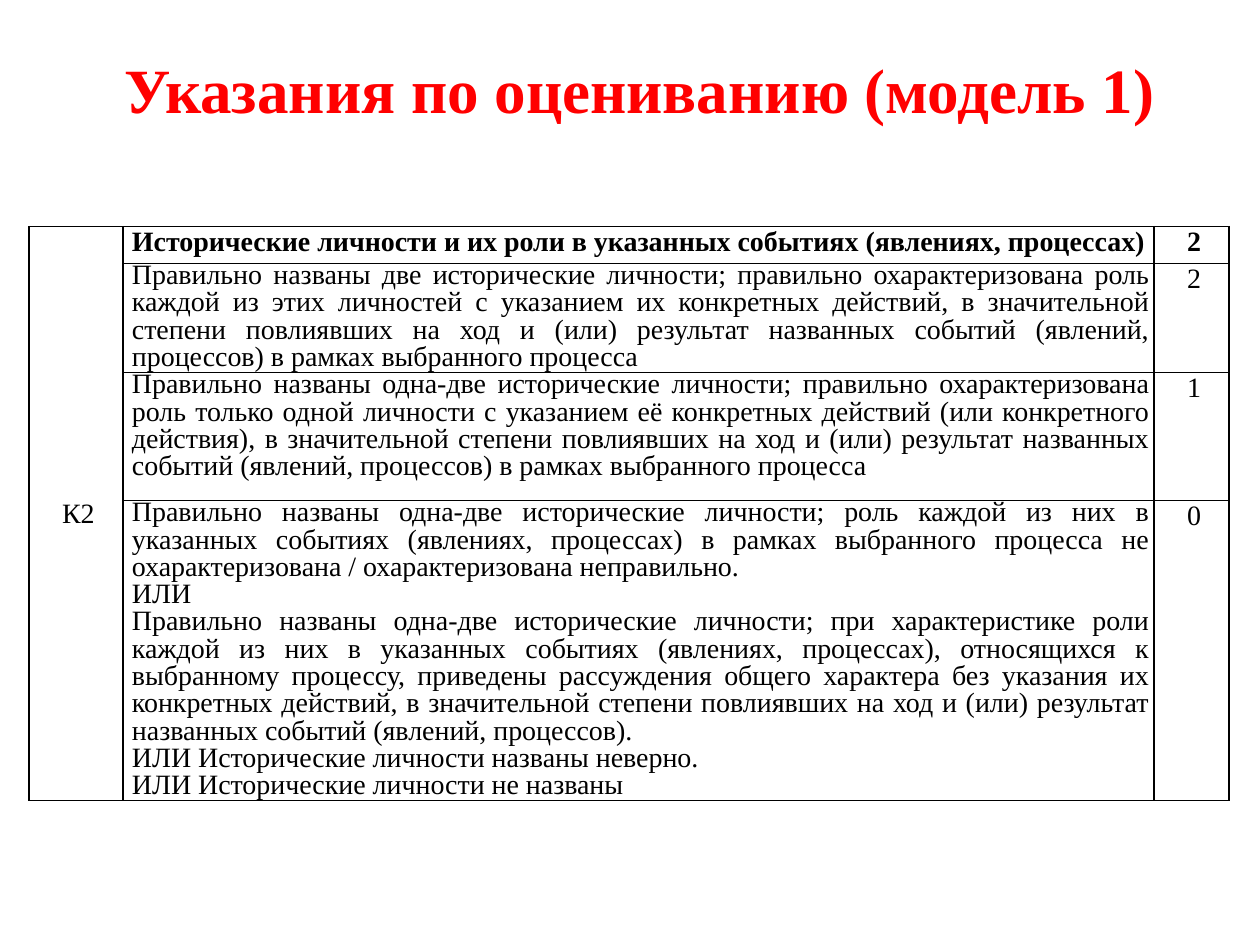
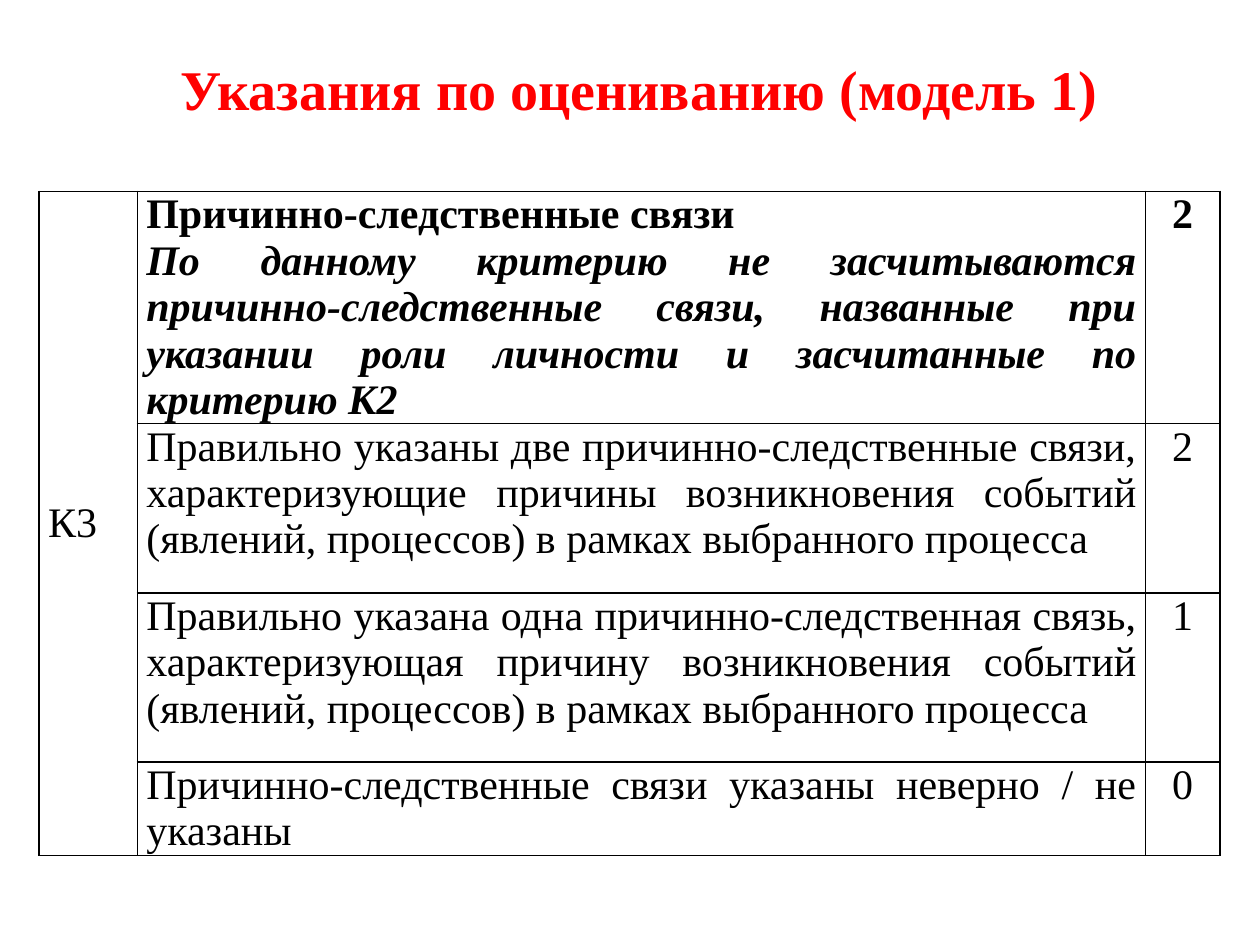
from pptx import Presentation
from pptx.dml.color import RGBColor
from pptx.enum.text import MSO_ANCHOR, MSO_AUTO_SIZE, PP_ALIGN
from pptx.oxml import parse_xml
from pptx.oxml.ns import nsdecls
from pptx.util import Cm, Pt

THEME = {
    "font": "Times New Roman",
    "title": RGBColor(0xFF, 0x00, 0x00),
    "text": RGBColor(0x00, 0x00, 0x00),
    "border": "000000",
    "border_pt": 1,
}
TITLE = "Указания по оцениванию (модель 1)"

# Each level is a score with the paragraphs that describe it; the first level is the heading.
CRITERIA = [
    {
        "code": "К2", "code_align": PP_ALIGN.CENTER, "title_size": 36, "size": 16,
        "left": 0.58, "top": 4.57, "cols": [1.9, 20.78, 1.52], "rows": [0.74, 2.1, 2.58, 5.87],
        "inset": 0.08, "indent": 0.1, "line_spacing": Pt(15.6),
        "levels": [
            ("2", ["Исторические личности и их роли в указанных событиях (явлениях, процессах)"]),
            ("2", ["Правильно названы две исторические личности; правильно охарактеризована роль "
                   "каждой из этих личностей с указанием их конкретных действий, в значительной "
                   "степени повлиявших на ход и (или) результат названных событий (явлений, "
                   "процессов) в рамках выбранного процесса"]),
            ("1", ["Правильно названы одна-две исторические личности; правильно охарактеризована "
                   "роль только одной личности с указанием её конкретных действий (или конкретного "
                   "действия), в значительной степени повлиявших на ход и (или) результат названных "
                   "событий (явлений, процессов) в рамках выбранного процесса"]),
            ("0", ["Правильно названы одна-две исторические личности; роль каждой из них в "
                   "указанных событиях (явлениях, процессах) в рамках выбранного процесса не "
                   "охарактеризована / охарактеризована неправильно.",
                   "ИЛИ",
                   "Правильно названы одна-две исторические личности; при характеристике роли "
                   "каждой из них в указанных событиях (явлениях, процессах), относящихся к "
                   "выбранному процессу, приведены рассуждения общего характера без указания их "
                   "конкретных действий, в значительной степени повлиявших на ход и (или) результат "
                   "названных событий (явлений, процессов).",
                   "ИЛИ Исторические личности названы неверно.",
                   "ИЛИ Исторические личности не названы"]),
        ],
    },
    {
        "code": "К3", "code_align": PP_ALIGN.JUSTIFY, "title_size": 32, "size": 24,
        "left": 0.79, "top": 3.86, "cols": [1.98, 20.32, 1.5], "rows": [4.68, 3.41, 3.41, 1.88],
        "inset": 0.18, "indent": 0, "line_spacing": None,
        "levels": [
            ("2", ["Причинно-следственные связи",
                   "По данному критерию не засчитываются причинно-следственные связи, названные "
                   "при указании роли личности и засчитанные по критерию К2"]),
            ("2", ["Правильно указаны две причинно-следственные связи, характеризующие причины "
                   "возникновения событий (явлений, процессов) в рамках выбранного процесса"]),
            ("1", ["Правильно указана одна причинно-следственная связь, характеризующая причину "
                   "возникновения событий (явлений, процессов) в рамках выбранного процесса"]),
            ("0", ["Причинно-следственные связи указаны неверно / не указаны"]),
        ],
    },
]


def add_run(p, text, size, color, bold=False, italic=False):
    r = p.add_run()
    r.text = text
    font = {"name": THEME["font"], "size": Pt(size), "bold": bold, "italic": italic}
    for name, value in font.items():
        setattr(r.font, name, value)
    r.font.color.rgb = color


def fill_cell(cell, paragraphs, criterion, align, bold=False, line_spacing=None):
    """Write paragraphs into a bordered cell; in a bold cell all but the first are italic."""
    inset = Cm(criterion["inset"])
    margins = {"margin_left": inset, "margin_right": inset, "margin_top": 0, "margin_bottom": 0}
    for name, value in margins.items():
        setattr(cell, name, value)
    tf = cell.text_frame
    for i, text in enumerate(paragraphs):
        p = tf.add_paragraph() if i else tf.paragraphs[0]
        p.alignment = align
        p.line_spacing = line_spacing
        pPr = p._p.get_or_add_pPr()
        pPr.set("marL", str(Cm(criterion["indent"])))
        pPr.set("indent", "0")
        add_run(p, text, criterion["size"], THEME["text"], bold, bold and i > 0)


prs = Presentation()
prs.slide_width, prs.slide_height = Cm(25.4), Cm(19.05)

for criterion in CRITERIA:
    s = prs.slides.add_slide(prs.slide_layouts[5])

    title = s.shapes.title
    title.left, title.top, title.width, title.height = Cm(1.27), Cm(0.76), Cm(23.24), Cm(2.03)
    tf = title.text_frame
    frame = {"word_wrap": True, "auto_size": MSO_AUTO_SIZE.NONE,
             "vertical_anchor": MSO_ANCHOR.MIDDLE}
    for name, value in frame.items():
        setattr(tf, name, value)
    tf.paragraphs[0].alignment = PP_ALIGN.CENTER
    add_run(tf.paragraphs[0], TITLE, criterion["title_size"], THEME["title"], bold=True)

    cols, rows, levels = criterion["cols"], criterion["rows"], criterion["levels"]
    table = s.shapes.add_table(len(rows), len(cols), Cm(criterion["left"]), Cm(criterion["top"]),
                               Cm(sum(cols)), Cm(sum(rows))).table
    table.first_row = table.horz_banding = False
    for column, width in zip(table.columns, cols):
        column.width = Cm(width)
    for row, height in zip(table.rows, rows):
        row.height = Cm(height)

    for cell in table.iter_cells():
        tcPr = cell._tc.get_or_add_tcPr()
        for side in ("lnL", "lnR", "lnT", "lnB"):
            tcPr.append(parse_xml(
                f'<a:{side} {nsdecls("a")} w="{Pt(THEME["border_pt"])}"><a:solidFill>'
                f'<a:srgbClr val="{THEME["border"]}"/></a:solidFill></a:{side}>'))
        cell.fill.background()

    code_cell = table.cell(0, 0)
    code_cell.merge(table.cell(len(rows) - 1, 0))
    code_cell.vertical_anchor = MSO_ANCHOR.MIDDLE
    fill_cell(code_cell, [criterion["code"]], criterion, criterion["code_align"])

    for i, (score, description) in enumerate(levels):
        heading = i == 0
        spacing = None if heading else criterion["line_spacing"]
        fill_cell(table.cell(i, 1), description, criterion, PP_ALIGN.JUSTIFY, heading, spacing)
        fill_cell(table.cell(i, 2), [score], criterion, PP_ALIGN.CENTER, heading)

prs.save("out.pptx")
